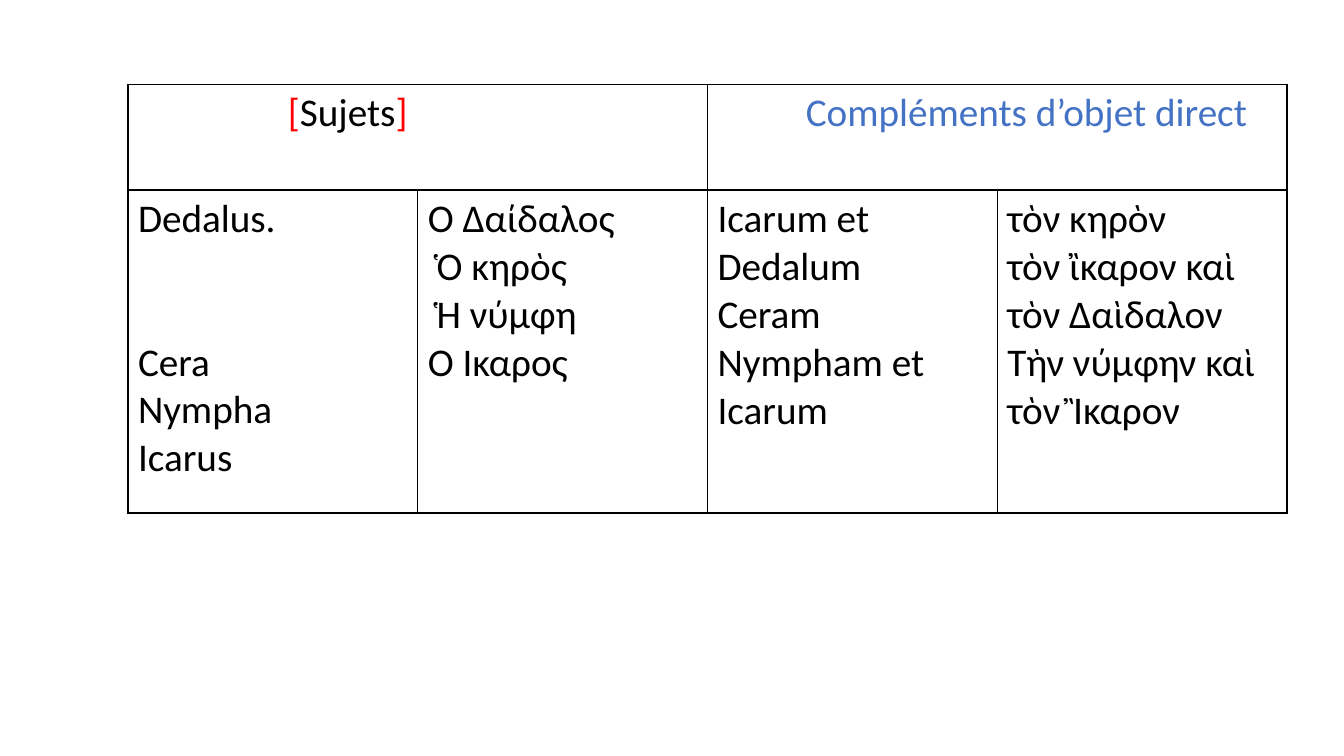
"""Build a slide with a table of Latin and Greek subjects and direct objects."""
from dataclasses import dataclass

from lxml import etree
from pptx import Presentation
from pptx import util as u
from pptx.dml import color
from pptx.oxml import ns
from pptx.table import _Cell

HUES = {"ink": "000000", "red": "FF0000", "blue": "4472C4"}
FONT, SIZE = "Calibri", 28
COL, ROWS = 207, (75.6, 230.7)
SPACE = 6.3


@dataclass(frozen=True)
class Line:
    """Hold one paragraph as pairs of text and hue, with its indent and gap."""
    bits: tuple[tuple[str, str], ...]
    indent: float = 0
    gap: float = 0


def ink(words: str, indent: float = 0, gap: float = 0) -> Line:
    """Make a line in the plain text colour."""
    return Line(((words, "ink"),), indent, gap)


HEADS = (
    Line((("[", "red"), ("Sujets", "ink"), ("]", "red")), 17 * SPACE),
    Line((("Compléments d’objet direct", "blue"),), 10 * SPACE),
)
LISTS = (
    (ink("Dedalus."), ink("Cera", gap=68.4), ink("Nympha"), ink("Icarus")),
    (ink("Ὁ Δαίδαλος"), ink("Ὁ κηρὸς", SPACE), ink("Ἡ νύμφη", SPACE), ink("Ὁ Ἲκαρος")),
    (ink("Icarum et Dedalum"), ink("Ceram"), ink("Nympham et Icarum")),
    (ink("τὸν κηρὸν"), ink("τὸν ἲκαρον καὶ τὸν Δαὶδαλον"), ink("Τὴν νύμφην καὶ τὸν Ἲκαρον")),
)


def write(cell: _Cell, lines: tuple[Line, ...]) -> None:
    """Fill a cell with formatted lines."""
    frame = cell.text_frame
    for i, line in enumerate(lines):
        para = frame.add_paragraph() if i else frame.paragraphs[0]
        para.space_before = u.Pt(line.gap)
        para._p.get_or_add_pPr().set("marL", str(u.Pt(line.indent)))
        for words, hue in line.bits:
            run = para.add_run()
            run.text = words
            run.font.name, run.font.size = FONT, u.Pt(SIZE)
            run.font.color.rgb = color.RGBColor.from_string(HUES[hue])


def border(cell: _Cell) -> None:
    """Give a cell thin borders and no fill."""
    props = cell._tc.get_or_add_tcPr()
    for side in "LRTB":
        edge = etree.SubElement(props, ns.qn(f"a:ln{side}"), w=str(u.Pt(1)))
        fill = etree.SubElement(edge, ns.qn("a:solidFill"))
        etree.SubElement(fill, ns.qn("a:srgbClr"), val=HUES["ink"])
    cell.fill.background()


def main() -> None:
    """Build and save the slide."""
    deck = Presentation()
    deck.slide_width, deck.slide_height = u.Pt(960), u.Pt(540)
    slide = deck.slides.add_slide(deck.slide_layouts[6])
    count = len(LISTS)
    grid = slide.shapes.add_table(
        len(ROWS), count, u.Pt(91.4), u.Pt(60.2), u.Pt(COL * count), u.Pt(sum(ROWS))
    ).table
    grid.first_row = grid.horz_banding = False
    for row, high in zip(grid.rows, ROWS):
        row.height = u.Pt(high)
    for cell in grid.iter_cells():
        border(cell)
    for i, head in enumerate(HEADS):
        cell = grid.cell(0, 2 * i)
        cell.merge(grid.cell(0, 2 * i + 1))
        write(cell, (head,))
    for i, lines in enumerate(LISTS):
        write(grid.cell(1, i), lines)
    deck.save("out.pptx")


if __name__ == "__main__":
    main()
